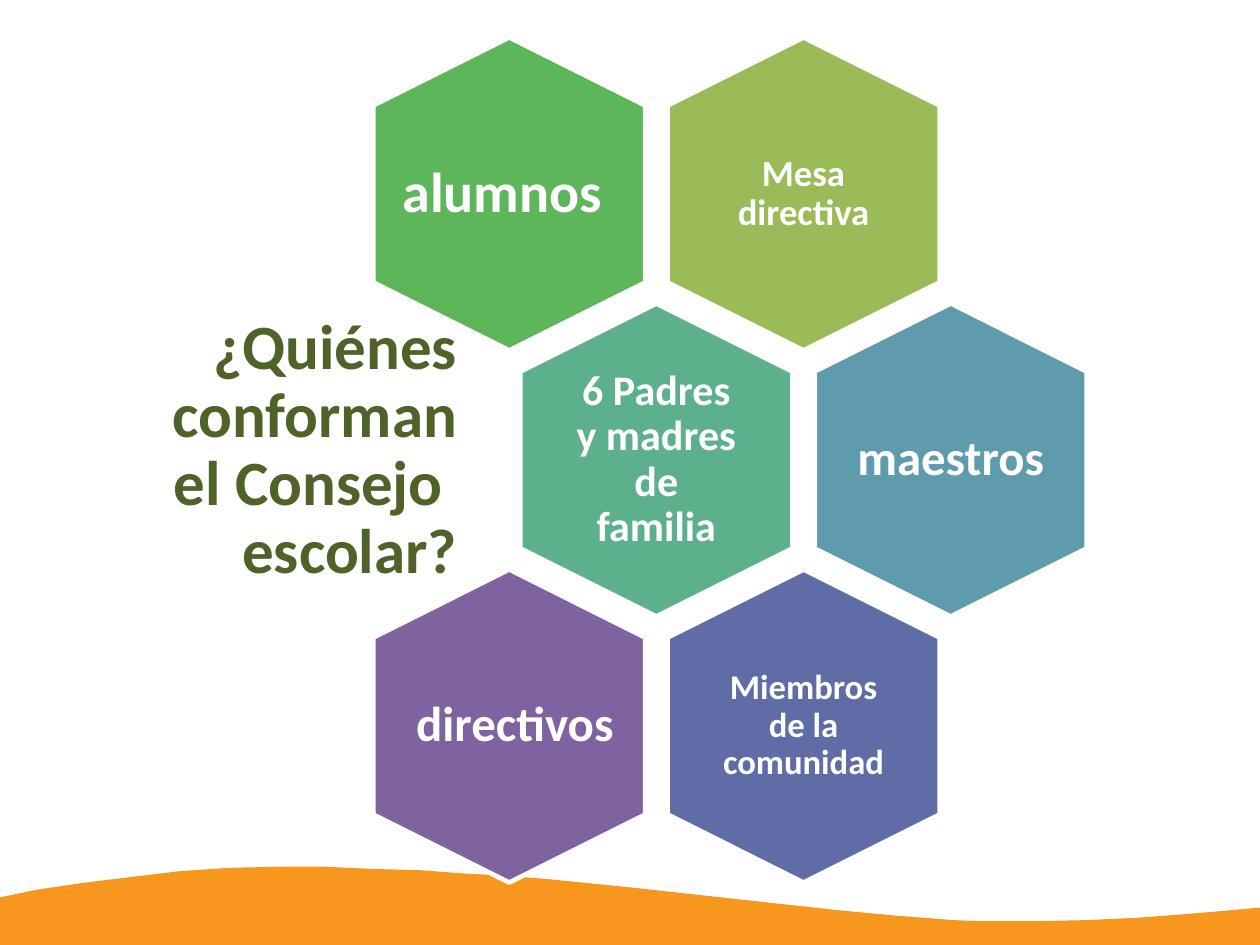
from pptx import Presentation
from pptx.dml.color import RGBColor
from pptx.enum.shapes import MSO_SHAPE
from pptx.enum.text import MSO_ANCHOR, PP_ALIGN
from pptx.util import Pt

HEX = MSO_SHAPE.HEXAGON
MIDDLE = MSO_ANCHOR.MIDDLE
CENTER, RIGHT = PP_ALIGN.CENTER, PP_ALIGN.RIGHT

TITLE = "¿Quiénes conforman el Consejo  escolar?"
CELLS = [
    dict(text="Mesa directiva", row=0, col=1, fill="9BBB59", size=23.3),
    dict(text="alumnos", row=0, col=0, fill="5EB65A", size=35.6,
         wide=179, shift=-6, pad=0),
    dict(text="6 Padres y madres de familia", row=1, col=0.5,
         fill="5CB18C", size=26.7),
    dict(text="maestros", row=1, col=1.5, fill="5E9BAC", size=31, pad=0),
    dict(text="Miembros de la comunidad", row=2, col=1,
         fill="606CA6", size=22),
    dict(text="directivos", row=2, col=0, fill="7F63A1", size=31.1,
         wide=201, shift=5, pad=0),
]
WAVE = [
    (0, 791), (34, 784), (75, 778), (116, 773), (158, 768), (201, 765),
    (244, 764), (287, 764), (330, 766), (370, 767), (410, 770), (448, 772),
    (484, 775), (554, 782), (736, 802), (789, 807), (815, 809), (840, 811),
    (865, 812), (913, 812), (959, 811), (1002, 809), (1042, 806),
    (1078, 803), (1111, 800), (1111, 833), (0, 833),
]
THEME = dict(font="Calibri", light="FFFFFF", title="4F6228",
             wave="F8971D", title_size=40)

PX = 9144
WIDE, HIGH = 1111, 833
HEX_W, HEX_H = 276, 240
FIRST_X, FIRST_Y = 449, 171
STEP_X, STEP_Y = 259.5, 234.5


def px(n):
    return round(n * PX)


def color(code):
    return RGBColor.from_string(code)


def write(text, box, size, tint=THEME["light"], align=CENTER, pad=10):
    frame = slide.shapes.add_textbox(*map(px, box)).text_frame
    frame.word_wrap = True
    frame.vertical_anchor = MIDDLE
    frame.margin_left = frame.margin_right = px(pad)
    frame.margin_top = frame.margin_bottom = px(pad)
    para = frame.paragraphs[0]
    para.alignment = align
    para.line_spacing = 0.9
    para.space_after = Pt(round(size * 0.35, 1))
    run = para.add_run()
    run.text = text
    run.font.name = THEME["font"]
    run.font.size = Pt(size)
    run.font.bold = True
    run.font.color.rgb = color(tint)


def draw_wave():
    path = slide.shapes.build_freeform(*WAVE[0], scale=PX)
    path.add_line_segments(WAVE[1:], close=True)
    wave = path.convert_to_shape()
    wave.shadow.inherit = False
    wave.fill.solid()
    wave.fill.fore_color.rgb = color(THEME["wave"])
    wave.line.fill.background()


def draw_cell(text, row, col, fill, size, wide=165, shift=0, pad=10):
    x = FIRST_X + col * STEP_X
    y = FIRST_Y + row * STEP_Y
    box = (x - HEX_W / 2, y - HEX_H / 2, HEX_W, HEX_H)
    cell = slide.shapes.add_shape(HEX, *map(px, box))
    cell.rotation = 90
    cell.adjustments[0] = 0.25
    cell.adjustments[1] = 1.1547
    cell.shadow.inherit = False
    cell.fill.solid()
    cell.fill.fore_color.rgb = color(fill)
    cell.line.color.rgb = color(THEME["light"])
    cell.line.width = Pt(3)
    write(text, (x + shift - wide / 2, y - 95, wide, 190), size, pad=pad)


deck = Presentation()
deck.slide_width, deck.slide_height = px(WIDE), px(HIGH)
slide = deck.slides.add_slide(deck.slide_layouts[6])

draw_wave()
for cell in CELLS:
    draw_cell(**cell)
write(TITLE, (122, 315, 298, 166), THEME["title_size"],
      tint=THEME["title"], align=RIGHT, pad=17)

deck.save("out.pptx")
